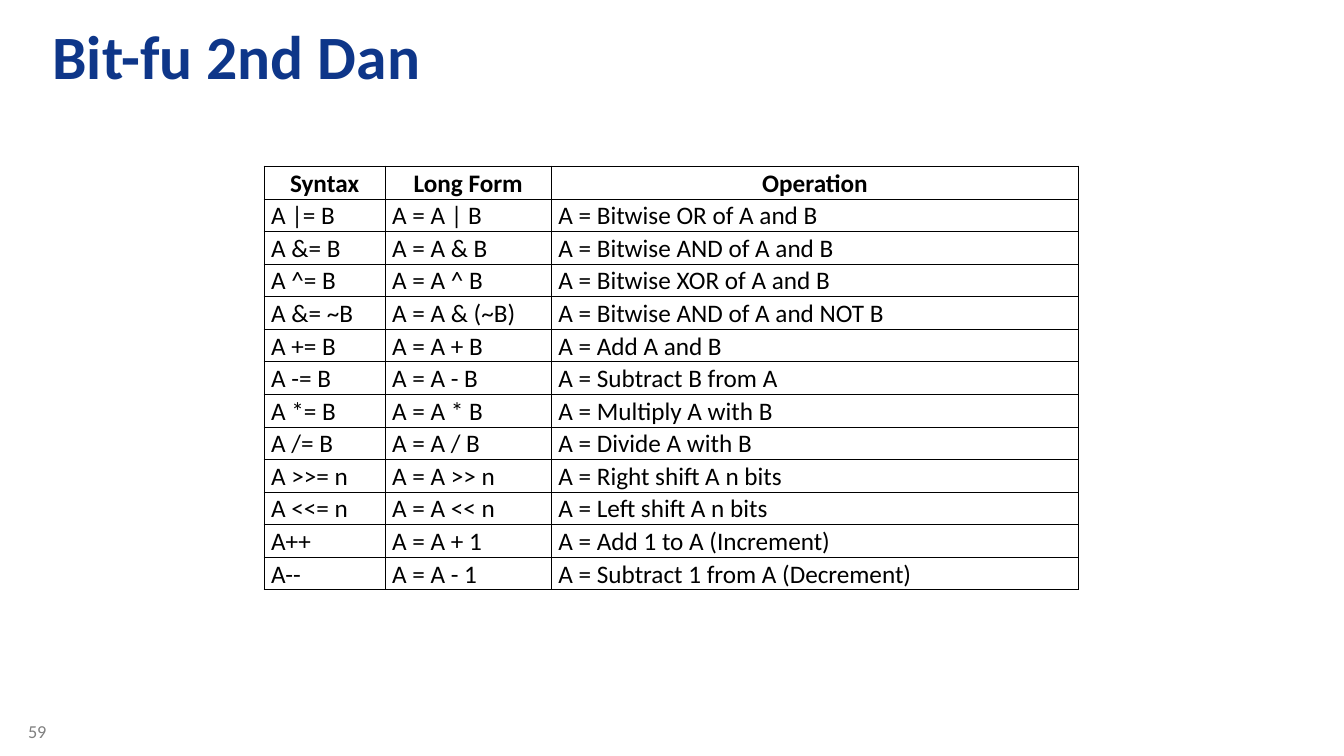
from dataclasses import dataclass

from lxml.etree import SubElement
from pptx import Presentation
from pptx.dml.color import RGBColor
from pptx.enum.text import MSO_ANCHOR as Anchor, MSO_AUTO_SIZE as AutoSize, PP_ALIGN as Align
from pptx.oxml.ns import qn
from pptx.util import Inches, Pt

FONT = "Calibri"
COLORS = {"title": "0E3689", "ink": "000000", "number": "808080"}
GRID_COLS, GRID_ROWS = 80, 45
UNIT = Inches(1) / 6
THICK, THIN = 1, 0.5


@dataclass(frozen=True)
class Box:
    """A place on the slide, in grid columns and rows."""
    col: float
    row: float
    cols: float
    rows: float


@dataclass(frozen=True)
class Operator:
    syntax: str
    long_form: str
    operation: str


TITLE_BOX = Box(2.34, 0.66, 74.82, 6.18)
NUMBER_BOX = Box(1.08, 42.6, 3.54, 2.4)
COLUMN_WIDTHS = (7.2, 9.9, 31.38)
ROW_HEIGHT = 1.94

HEADER = Operator("Syntax", "Long Form", "Operation")
OPERATORS = [
    Operator("A |= B", "A = A | B", "A = Bitwise OR of A and B"),
    Operator("A &= B", "A = A & B", "A = Bitwise AND of A and B"),
    Operator("A ^= B", "A = A ^ B", "A = Bitwise XOR of A and B"),
    Operator("A &= ~B", "A = A & (~B)", "A = Bitwise AND of A and NOT B"),
    Operator("A += B", "A = A + B", "A = Add A and B"),
    Operator("A -= B", "A = A - B", "A = Subtract B from A"),
    Operator("A *= B", "A = A * B", "A = Multiply A with B"),
    Operator("A /= B", "A = A / B", "A = Divide A with B"),
    Operator("A >>= n", "A = A >> n", "A = Right shift A n bits"),
    Operator("A <<= n", "A = A << n", "A = Left shift A n bits"),
    Operator("A++", "A = A + 1", "A = Add 1 to A (Increment)"),
    Operator("A--", "A = A - 1", "A = Subtract 1 from A (Decrement)"),
]
TABLE_BOX = Box(15.72, 9.9, sum(COLUMN_WIDTHS), ROW_HEIGHT * (len(OPERATORS) + 1))


def grid(cells: float) -> int:
    """Turn a number of grid cells into a length."""
    return round(cells * UNIT)


def place(box: Box) -> tuple:
    return grid(box.col), grid(box.row), grid(box.cols), grid(box.rows)


def add_run(p, text: str, size: float, color: str, bold: bool = False) -> None:
    r = p.add_run()
    r.text = text
    r.font.name, r.font.size, r.font.bold = FONT, Pt(size), bold
    r.font.color.rgb = RGBColor.from_string(COLORS[color])


def set_borders(cell, widths: dict) -> None:
    """Draw the cell's edges; widths are in points by edge letter."""
    tc_pr = cell._tc.get_or_add_tcPr()
    for edge, width in widths.items():
        ln = SubElement(tc_pr, qn(f"a:ln{edge}"), w=str(Pt(width)))
        fill = SubElement(ln, qn("a:solidFill"))
        SubElement(fill, qn("a:srgbClr"), val=COLORS["ink"])


def add_title(slide, text: str) -> None:
    sp = slide.shapes.title
    sp.left, sp.top, sp.width, sp.height = place(TITLE_BOX)
    tf = sp.text_frame
    tf.auto_size, tf.vertical_anchor, tf.word_wrap = AutoSize.NONE, Anchor.TOP, True
    tf.margin_left = tf.margin_right = Inches(0.13)
    tf.margin_top = tf.margin_bottom = Inches(0.07)
    p = tf.paragraphs[0]
    p.alignment = Align.LEFT
    add_run(p, text, 44, "title", bold=True)


def add_slide_number(slide, number: str) -> None:
    tf = slide.shapes.add_textbox(*place(NUMBER_BOX)).text_frame
    tf.word_wrap = True
    add_run(tf.paragraphs[0], number, 13, "number")


def add_operator_table(slide) -> None:
    records = [HEADER, *OPERATORS]
    last_row, last_col = len(records) - 1, len(COLUMN_WIDTHS) - 1
    frame = slide.shapes.add_table(len(records), len(COLUMN_WIDTHS), *place(TABLE_BOX))
    table = frame.table
    table.first_row = table.horz_banding = False
    for column, width in zip(table.columns, COLUMN_WIDTHS):
        column.width = grid(width)
    for i, record in enumerate(records):
        is_header = i == 0
        table.rows[i].height = grid(ROW_HEIGHT)
        for j, text in enumerate((record.syntax, record.long_form, record.operation)):
            cell = table.cell(i, j)
            cell.vertical_anchor = Anchor.BOTTOM
            cell.margin_left = Inches(0.01 if is_header else 0.07)
            cell.margin_right = cell.margin_top = Inches(0.01)
            cell.margin_bottom = 0
            set_borders(cell, {
                "L": THICK if j == 0 else THIN,
                "R": THICK if j == last_col else THIN,
                "T": THICK if is_header else THIN,
                "B": THICK if i == last_row else THIN,
            })
            cell.fill.background()
            p = cell.text_frame.paragraphs[0]
            p.alignment = Align.CENTER if is_header else Align.LEFT
            add_run(p, text, 18, "ink", bold=is_header)


def main() -> None:
    prs = Presentation()
    prs.slide_width, prs.slide_height = grid(GRID_COLS), grid(GRID_ROWS)
    slide = prs.slides.add_slide(prs.slide_layouts.get_by_name("Title Only"))
    add_slide_number(slide, "59")
    add_title(slide, "Bit-fu 2nd Dan")
    add_operator_table(slide)
    prs.save("out.pptx")


if __name__ == "__main__":
    main()
